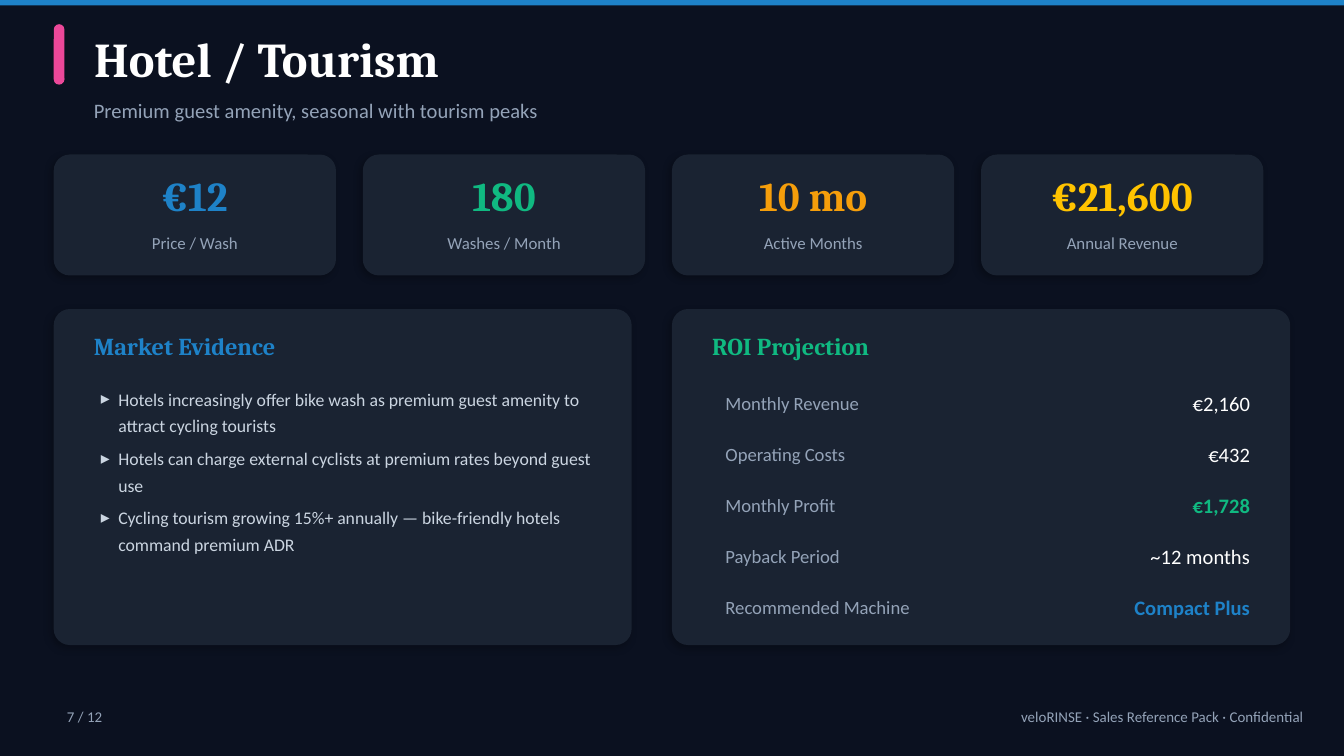
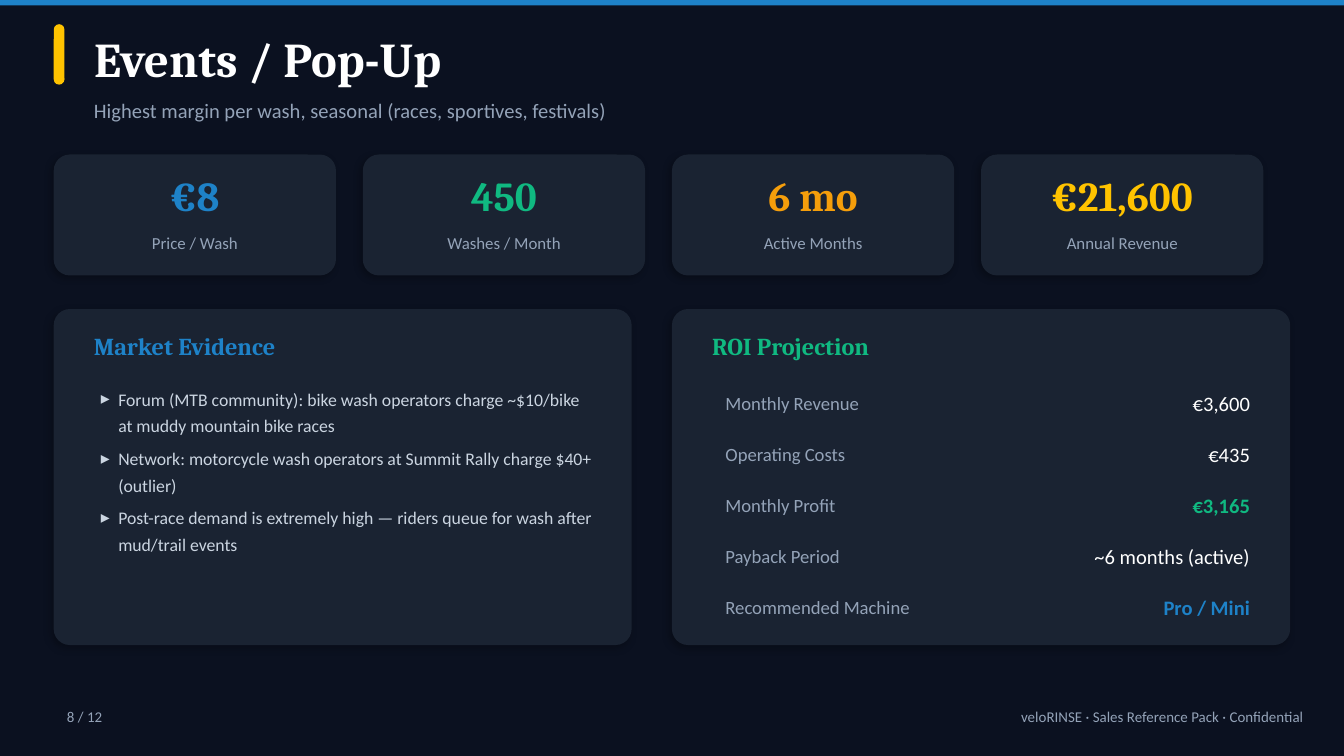
"""Build two market segment slides with key figures, evidence and ROI."""
from dataclasses import dataclass
from lxml.etree import SubElement
from pptx import Presentation
from pptx.dml.color import RGBColor
from pptx.enum.shapes import MSO_SHAPE
from pptx.enum.text import MSO_ANCHOR, MSO_AUTO_SIZE, PP_ALIGN
from pptx.oxml.ns import qn
from pptx.util import Inches, Pt


@dataclass(frozen=True)
class Theme:
    """Colours, fonts and type sizes of the deck."""
    night: str = "0B1120"
    card: str = "1A2332"
    blue: str = "1E82C8"
    green: str = "10B981"
    amber: str = "F59E0B"
    gold: str = "FFC300"
    pink: str = "EC4899"
    white: str = "FFFFFF"
    pale: str = "CBD5E1"
    grey: str = "94A3B8"
    serif: str = "Cambria"
    sans: str = "Calibri"
    title: float = 26
    figure: float = 22
    head: float = 13
    lead: float = 11
    row: float = 10
    list: float = 9.5
    label: float = 9
    foot: float = 8


look = Theme()
left, mid, right = PP_ALIGN.LEFT, PP_ALIGN.CENTER, PP_ALIGN.RIGHT
deck = Presentation()
deck.slide_width = Inches(10)
deck.slide_height = deck.slide_width * 9 // 16
unit = deck.slide_width // 100


def block(slide, x, y, w, h, color, curve=0, shade=False):
    """Draw a filled panel, placed in hundredths of the slide width."""
    kind = MSO_SHAPE.ROUNDED_RECTANGLE if curve else MSO_SHAPE.RECTANGLE
    area = [int(n * unit) for n in (x, y, w, h)]
    shape = slide.shapes.add_shape(kind, *area)
    shape.shadow.inherit = False
    shape.fill.solid()
    shape.fill.fore_color.rgb = RGBColor.from_string(color)
    shape.line.fill.background()
    if curve:
        shape.adjustments[0] = curve / min(w, h)
    if shade:
        glow = SubElement(shape._element.spPr.find(qn("a:effectLst")), qn("a:outerShdw"),
                          blurRad=str(Pt(4)), dist=str(Pt(2)),
                          dir=str(135 * 60000), algn="bl", rotWithShape="0")
        tint = SubElement(glow, qn("a:srgbClr"), val="000000")
        SubElement(tint, qn("a:alpha"), val="25000")


def write(slide, x, y, w, h, lines, size, color, font=look.sans,
          bold=False, align=left, hold=None):
    """Write lines in a new text box or in the given placeholder."""
    area = [int(n * unit) for n in (x, y, w, h)]
    if hold is None:
        hold = slide.shapes.add_textbox(*area)
    hold.left, hold.top, hold.width, hold.height = area
    frame = hold.text_frame
    frame.word_wrap = True
    frame.auto_size = MSO_AUTO_SIZE.NONE
    frame.vertical_anchor = MSO_ANCHOR.MIDDLE
    for i, line in enumerate(lines):
        para = frame.add_paragraph() if i else frame.paragraphs[0]
        para.alignment = align
        para.space_before = Pt(0)
        run = para.add_run()
        run.text = line
        run.font.name, run.font.size, run.font.bold = font, Pt(size), bold
        run.font.color.rgb = RGBColor.from_string(color)
    return frame


stats = [("Price / Wash", look.blue), ("Washes / Month", look.green),
         ("Active Months", look.amber), ("Annual Revenue", look.gold)]
rows = [("Monthly Revenue", look.white, False), ("Operating Costs", look.white, False),
        ("Monthly Profit", look.green, True), ("Payback Period", look.white, False),
        ("Recommended Machine", look.blue, True)]
pages = [
    (7, "Hotel / Tourism", "Premium guest amenity, seasonal with tourism peaks", look.pink,
     ["€12", "180", "10 mo", "€21,600"],
     ["Hotels increasingly offer bike wash as premium guest amenity to attract cycling tourists",
      "Hotels can charge external cyclists at premium rates beyond guest use",
      "Cycling tourism growing 15%+ annually — bike-friendly hotels command premium ADR"],
     ["€2,160", "€432", "€1,728", "~12 months", "Compact Plus"]),
    (8, "Events / Pop-Up", "Highest margin per wash, seasonal (races, sportives, festivals)",
     look.gold, ["€8", "450", "6 mo", "€21,600"],
     ["Forum (MTB community): bike wash operators charge ~$10/bike at muddy mountain bike races",
      "Network: motorcycle wash operators at Summit Rally charge $40+ (outlier)",
      "Post-race demand is extremely high — riders queue for wash after mud/trail events"],
     ["€3,600", "€435", "€3,165", "~6 months (active)", "Pro / Mini"]),
]

for page, name, lead, accent, figures, facts, sums in pages:
    slide = deck.slides.add_slide(deck.slide_layouts[1])
    slide.background.fill.solid()
    slide.background.fill.fore_color.rgb = RGBColor.from_string(look.night)
    block(slide, 0, 0, 100, 0.4, look.blue)
    write(slide, 4, 51.8, 12, 3, [f"{page} / 12"], look.foot, look.grey)
    write(slide, 50, 51.8, 48, 3, ["veloRINSE · Sales Reference Pack · Confidential"],
          look.foot, look.grey, align=right)

    block(slide, 4, 1.8, 0.8, 4.5, accent, 0.4)
    write(slide, 6, 1.8, 60, 5, [name], look.title, look.white, look.serif, True,
          hold=slide.shapes.title)
    write(slide, 6, 6.8, 60, 2.8, [lead], look.lead, look.grey)

    for i, ((label, color), figure) in enumerate(zip(stats, figures)):
        x = 4 + 23 * i
        block(slide, x, 11.5, 21, 9, look.card, 1.2, True)
        write(slide, x, 12.3, 21, 4.5, [figure], look.figure, color, look.serif, True, mid)
        write(slide, x, 16.3, 21, 3.5, [label], look.label, look.grey, align=mid)

    for x, w, head, color in [(4, 43, "Market Evidence", look.blue),
                              (50, 46, "ROI Projection", look.green)]:
        block(slide, x, 23, w, 25, look.card, 1.2, True)
        write(slide, x + 2, 24, 40, 3.5, [head], look.head, color, look.serif, True)

    body = slide.placeholders[1]
    slide.shapes._spTree.append(body._element)
    frame = write(slide, 6.5, 28, 39, 13.2, facts, look.list, look.pale, hold=body)
    frame.vertical_anchor = MSO_ANCHOR.TOP
    for i, para in enumerate(frame.paragraphs):
        props = para._p.get_or_add_pPr()
        props.set("marL", str(int(1.3 * unit)))
        props.set("indent", str(int(-1.3 * unit)))
        SubElement(props, qn("a:buFont"), typeface=look.sans)
        SubElement(props, qn("a:buChar"), char="▸")
        para.line_spacing = 1.25
        para.space_before = Pt(3.4 if i else 0)

    for i, ((label, color, bold), value) in enumerate(zip(rows, sums)):
        y = 28.5 + 3.8 * i
        write(slide, 53, y, 22, 3, [label], look.row, look.grey)
        write(slide, 75, y, 19, 3, [value], look.lead, color, bold=bold, align=right)

deck.save("out.pptx")
